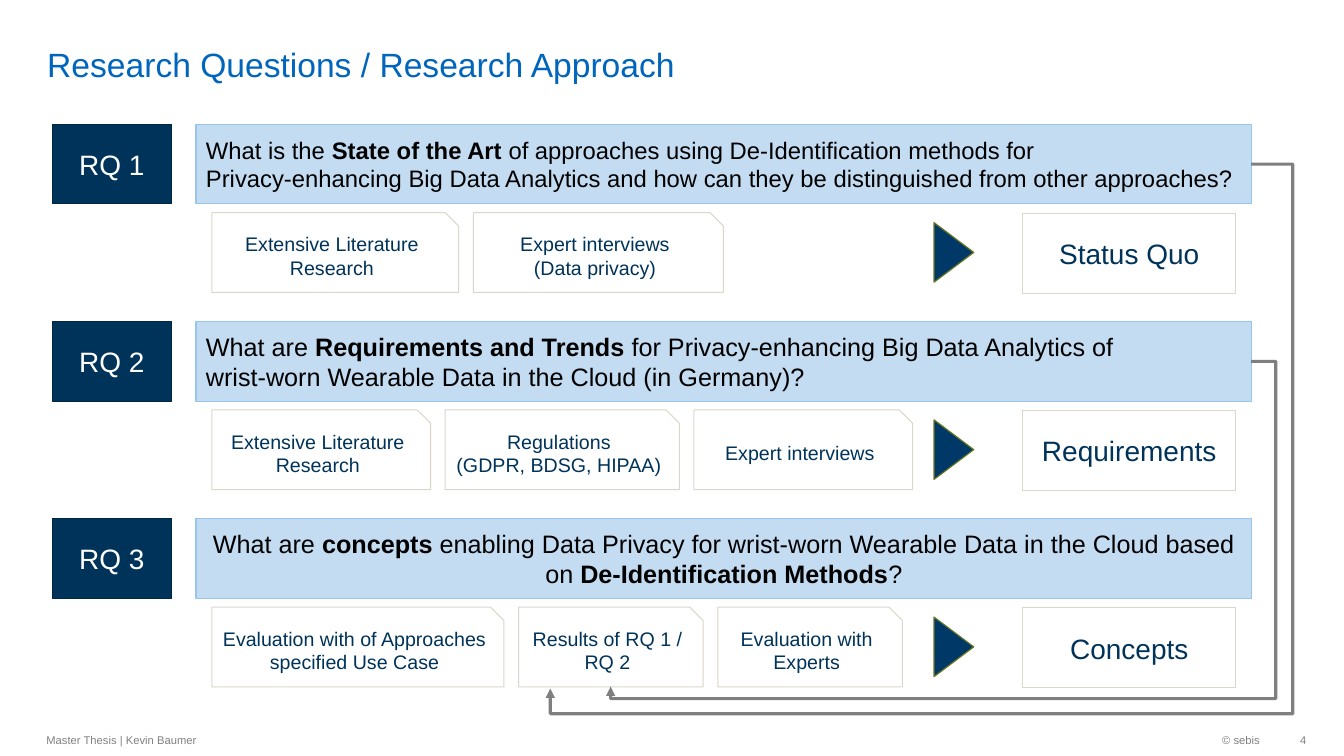
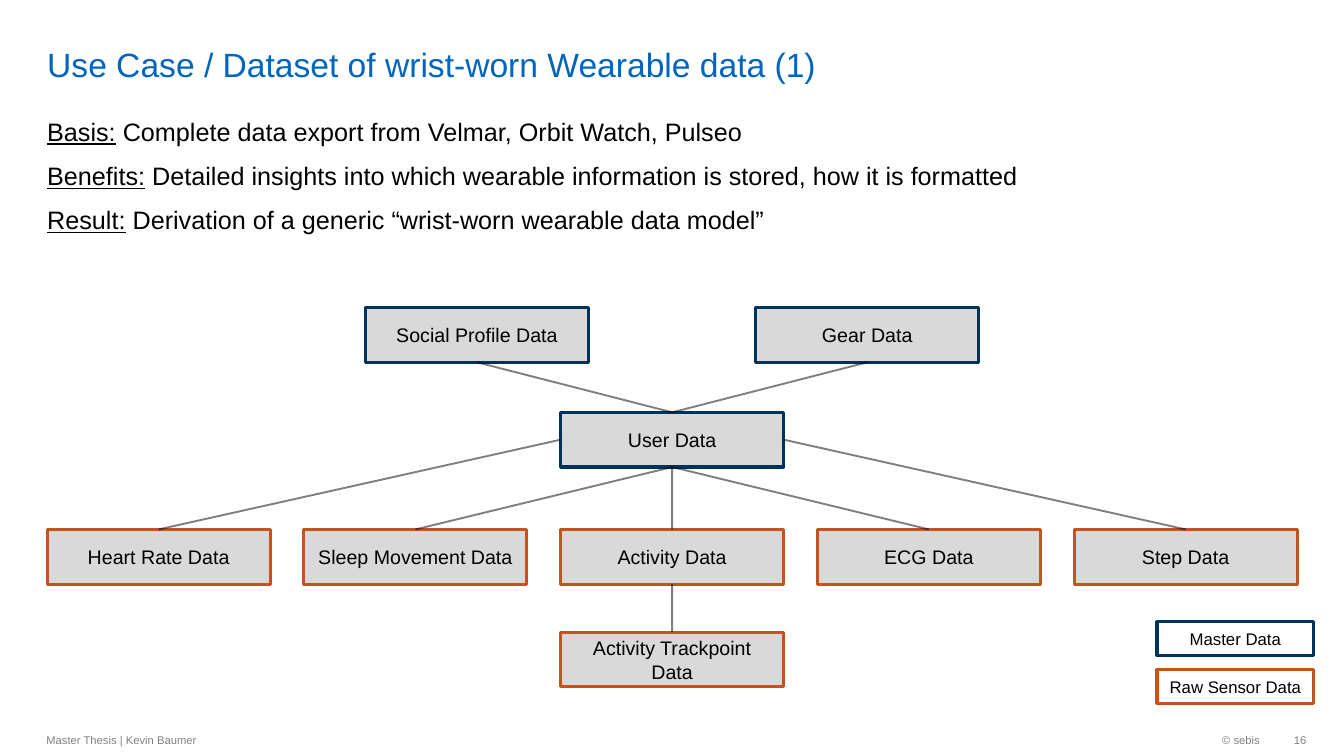
import pptx
import pptx.util
import pptx.dml.color
import pptx.enum.shapes
import pptx.enum.text
import pptx.oxml.ns
from lxml import etree

Cm = pptx.util.Cm
Pt = pptx.util.Pt
qn = pptx.oxml.ns.qn
SHAPE = pptx.enum.shapes.MSO_SHAPE
CONNECTOR = pptx.enum.shapes.MSO_CONNECTOR
ALIGN = pptx.enum.text.PP_ALIGN
ANCHOR = pptx.enum.text.MSO_ANCHOR

FONT = "Arial"
BLACK, WHITE, GREY = "000000", "FFFFFF", "808080"
TITLE_BLUE, NAVY, NAVY_EDGE = "0065BD", "003359", "002642"
PALE_BLUE, PALE_EDGE = "C4DCF2", "98C6EA"
CARD_EDGE, ARROW_FILL, ARROW_EDGE = "DAD7CB", "003968", "6B7623"
NODE_FILL, ORANGE = "D9D9D9", "C5531F"

AUTHOR_LINE = "Master Thesis | Kevin Baumer"
COPYRIGHT = "© sebis"

APPROACH_TITLE = "Research Questions / Research Approach"
RESEARCH_QUESTIONS = [
    {
        "label": "RQ 1",
        "question": "What is the *State of the Art *of approaches using De-Identification methods for"
                    "\vPrivacy-enhancing Big Data Analytics and how can they be distinguished"
                    " from other approaches?",
        "size": 17,
        "align": ALIGN.LEFT,
        "steps": [("Extensive Literature Research", 6.22), ("Expert interviews\v(Data privacy)", 6.3)],
        "outcome": "Status Quo",
    },
    {
        "label": "RQ 2",
        "question": "What are *Requirements and Trends *for Privacy-enhancing Big Data Analytics of"
                    "\vwrist-worn Wearable Data in the Cloud (in Germany)?",
        "size": 18,
        "align": ALIGN.LEFT,
        "steps": [("Extensive Literature Research", 5.51), ("Regulations\v(GDPR, BDSG, HIPAA)", 5.9),
                  ("Expert interviews", 5.51)],
        "outcome": "Requirements",
    },
    {
        "label": "RQ 3",
        "question": "What are *concepts* enabling Data Privacy for wrist-worn Wearable Data"
                    " in the Cloud based on *De-Identification Methods*?",
        "size": 18,
        "align": ALIGN.CENTER,
        "steps": [("Evaluation with of Approaches specified Use Case", 7.36),
                  ("Results of RQ 1 / RQ 2", 4.65), ("Evaluation with Experts", 4.65)],
        "outcome": "Concepts",
    },
]
FEEDBACK = [
    {"row": 0, "end": (13.87, 17.35), "turn": (32.59, 17.98)},
    {"row": 1, "end": (15.39, 17.3), "turn": (32.16, 17.6)},
]

DATASET_TITLE = "Use Case / Dataset of wrist-worn Wearable data (1)"
DATASET_FACTS = [
    "*Basis:* Complete data export from Velmar, Orbit Watch, Pulseo",
    "*Benefits:* Detailed insights into which wearable information is stored, how it is formatted",
    "*Result:* Derivation of a generic “wrist-worn wearable data model”",
]
DATA_NODES = {
    "Social Profile Data": (1.24, 7.75, NAVY),
    "Gear Data": (2.76, 7.75, NAVY),
    "User Data": (2, 10.39, NAVY),
    "Heart Rate Data": (0, 13.34, ORANGE),
    "Sleep Movement Data": (1, 13.34, ORANGE),
    "Activity Data": (2, 13.34, ORANGE),
    "ECG Data": (3, 13.34, ORANGE),
    "Step Data": (4, 13.34, ORANGE),
    "Activity Trackpoint Data": (2, 15.93, ORANGE),
}
TOP, LEFT, BOTTOM, RIGHT = range(4)
DATA_LINKS = [
    ("Social Profile Data", BOTTOM, "User Data"),
    ("Gear Data", BOTTOM, "User Data"),
    ("User Data", LEFT, "Heart Rate Data"),
    ("User Data", BOTTOM, "Sleep Movement Data"),
    ("User Data", BOTTOM, "Activity Data"),
    ("User Data", BOTTOM, "ECG Data"),
    ("User Data", RIGHT, "Step Data"),
    ("Activity Data", BOTTOM, "Activity Trackpoint Data"),
]
LEGEND = [("Master Data", NAVY), ("Raw Sensor Data", ORANGE)]


def rgb(value):
    return pptx.dml.color.RGBColor.from_string(value)


def write(paragraph, marked, size, color, align, emphasis="bold"):
    paragraph.alignment = align
    for index, segment in enumerate(marked.split("*")):
        for line_index, line in enumerate(segment.split("\v")):
            if line_index:
                paragraph.add_line_break()
            if line:
                run = paragraph.add_run()
                run.text = line
                run.font.name = FONT
                run.font.size = Pt(size)
                run.font.color.rgb = rgb(color)
                if index % 2:
                    setattr(run.font, emphasis, True)
    for line_break in paragraph._p.findall(qn("a:br")):
        etree.SubElement(line_break, qn("a:rPr"), sz=str(size * 100))


def add_text(slide, box, text, size, color, align=ALIGN.LEFT, anchor=ANCHOR.MIDDLE):
    frame = slide.shapes.add_textbox(*map(Cm, box)).text_frame
    frame.word_wrap = True
    frame.vertical_anchor = anchor
    write(frame.paragraphs[0], text, size, color, align)
    return frame


def add_box(slide, box, fill, edge, width, text="", size=14, color=BLACK,
            align=ALIGN.CENTER, kind=SHAPE.RECTANGLE):
    shape = slide.shapes.add_shape(kind, *map(Cm, box))
    shape.shadow.inherit = False
    if fill:
        shape.fill.solid()
        shape.fill.fore_color.rgb = rgb(fill)
    else:
        shape.fill.background()
    shape.line.color.rgb = rgb(edge)
    shape.line.width = Pt(width)
    if text:
        shape.text_frame.word_wrap = True
        shape.text_frame.vertical_anchor = ANCHOR.MIDDLE
        write(shape.text_frame.paragraphs[0], text, size, color, align)
    return shape


def style_link(link, width):
    link.line.color.rgb = rgb(BLACK)
    link.line.width = Pt(width)
    properties = link._element.spPr
    etree.SubElement(properties.find(".//" + qn("a:srgbClr")), qn("a:alpha"), val="50000")
    etree.SubElement(properties, qn("a:effectLst"))


def add_feedback(slide, source, end, turn):
    link = slide.shapes.add_connector(CONNECTOR.ELBOW, source.left + source.width,
                                      source.top + source.height // 2, *map(Cm, end))
    link.begin_connect(source, RIGHT)
    style_link(link, 2.25)
    geometry = link._element.spPr.find(qn("a:prstGeom"))
    geometry.set("prst", "bentConnector4")
    guides = geometry.find(qn("a:avLst"))
    if guides is None:
        guides = etree.SubElement(geometry, qn("a:avLst"))
    ratios = ((Cm(turn[0]) - link.begin_x) / (link.end_x - link.begin_x),
              (Cm(turn[1]) - link.begin_y) / (link.end_y - link.begin_y))
    for number, ratio in enumerate(ratios, 1):
        etree.SubElement(guides, qn("a:gd"), name=f"adj{number}", fmla=f"val {round(ratio * 100000)}")
    etree.SubElement(link.line._get_or_add_ln(), qn("a:tailEnd"), type="triangle")


def add_slide(deck, title, number):
    slide = deck.slides.add_slide(deck.slide_layouts[6])
    heading = add_text(slide, (0.94, 0.13, 29.41, 2), title, 24, TITLE_BLUE, anchor=ANCHOR.BOTTOM)
    heading.margin_top = heading.margin_bottom = 0
    add_text(slide, (0.92, 18.25, 16, 0.8), AUTHOR_LINE, 8, GREY)
    add_text(slide, (26.06, 18.25, 5.94, 0.8), COPYRIGHT, 8, GREY, ALIGN.RIGHT)
    page = add_text(slide, (32, 18.25, 0.92, 0.8), str(number), 8, GREY, ALIGN.RIGHT)
    page.margin_right = 0
    return slide


def build_approach(deck):
    slide = add_slide(deck, APPROACH_TITLE, 4)
    height, gap = 2.01, 0.37
    questions = []
    for row, entry in enumerate(RESEARCH_QUESTIONS):
        top = 3.13 + row * 4.97
        add_box(slide, (1.32, top, 3, height), NAVY, NAVY_EDGE, 0.85, entry["label"], 20, WHITE)
        questions.append(add_box(slide, (4.94, top, 26.6, height), PALE_BLUE, PALE_EDGE, 0.75,
                                 entry["question"], entry["size"], BLACK, entry["align"]))
        left = 5.34
        for step, width in entry["steps"]:
            add_box(slide, (left, top + 2.23, width, height), WHITE, CARD_EDGE, 0.75,
                    step, 14, NAVY, kind=SHAPE.SNIP_1_RECTANGLE)
            left += width + gap
        arrow = add_box(slide, (23.29, top + 2.73, 1.5, 1), ARROW_FILL, ARROW_EDGE, 0.85,
                        kind=SHAPE.FLOWCHART_MERGE)
        arrow.rotation = 270
        add_box(slide, (25.78, top + 2.25, 5.36, height), WHITE, CARD_EDGE, 0.75,
                entry["outcome"], 20, NAVY)
    for loop in FEEDBACK:
        add_feedback(slide, questions[loop["row"]], loop["end"], loop["turn"])


def build_dataset(deck):
    slide = add_slide(deck, DATASET_TITLE, 16)
    facts = slide.shapes.add_textbox(Cm(0.94), Cm(2.8), Cm(32), Cm(3.6)).text_frame
    facts.word_wrap = True
    for index, fact in enumerate(DATASET_FACTS):
        paragraph = facts.add_paragraph() if index else facts.paragraphs[0]
        paragraph.space_before = Pt(4 if index else 0)
        paragraph.space_after = Pt(6)
        write(paragraph, fact, 18, BLACK, ALIGN.LEFT, "underline")

    nodes = {}
    for name, (column, top, edge) in DATA_NODES.items():
        nodes[name] = add_box(slide, (1.19 + column * 6.47, top, 5.62, 1.38),
                              NODE_FILL, edge, 2.25, name)
    for source, side, target in DATA_LINKS:
        link = slide.shapes.add_connector(CONNECTOR.STRAIGHT, 0, 0, 0, 0)
        link.begin_connect(nodes[source], side)
        link.end_connect(nodes[target], TOP)
        style_link(link, 1.35)
    for row, (name, edge) in enumerate(LEGEND):
        add_box(slide, (29.16, 15.67 + row * 1.2, 3.95, 0.85), None, edge, 2.25, name, 12)


def main():
    deck = pptx.Presentation()
    deck.slide_width, deck.slide_height = Cm(33.87), Cm(19.05)
    build_approach(deck)
    build_dataset(deck)
    deck.save("out.pptx")


if __name__ == "__main__":
    main()
